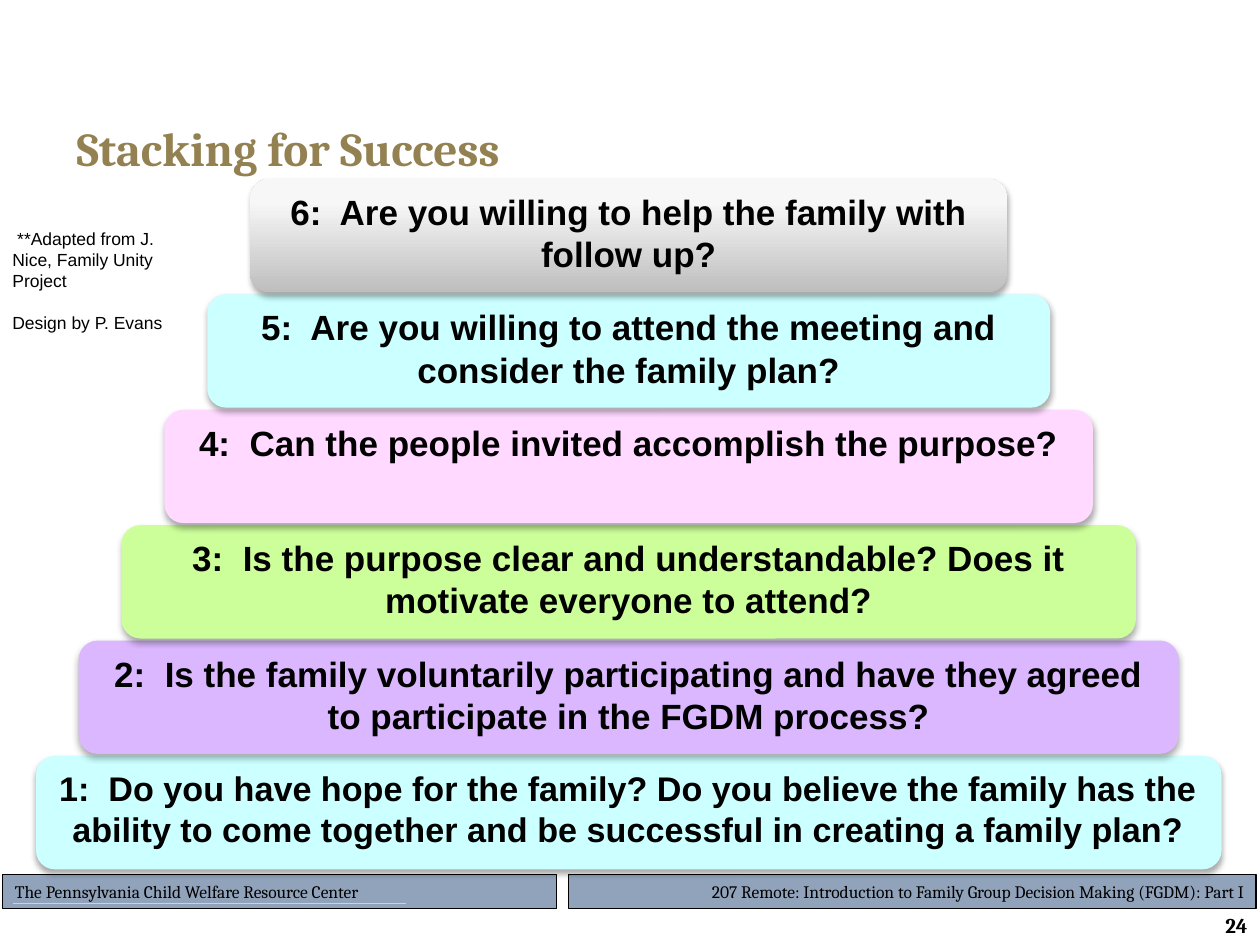
import pptx
import pptx.util
import pptx.dml.color
import pptx.enum.shapes
import pptx.enum.text
import pptx.oxml
import pptx.oxml.ns

Inches, Pt = pptx.util.Inches, pptx.util.Pt
RGBColor = pptx.dml.color.RGBColor
MSO_SHAPE = pptx.enum.shapes.MSO_SHAPE
ALIGN = pptx.enum.text.PP_ALIGN
ANCHOR = pptx.enum.text.MSO_ANCHOR

BLACK = RGBColor(0x00, 0x00, 0x00)
GOLD = RGBColor(0x94, 0x81, 0x51)
PALE_GOLD = RGBColor(0xE5, 0xD1, 0x99)
SLATE = RGBColor(0x91, 0xA3, 0xBB)
CYAN = RGBColor(0xCC, 0xFF, 0xFF)
VIOLET = RGBColor(0xDB, 0xB7, 0xFF)
GREEN = RGBColor(0xCC, 0xFF, 0x99)
PINK = RGBColor(0xFF, 0xD9, 0xFF)
GREY = RGBColor(0xBE, 0xBE, 0xBE)
LIGHT_GREY = RGBColor(0xF7, 0xF7, 0xF7)

# Bottom of the stack first: question, fill (a pair is a gradient), text size
QUESTIONS = [
    ("1:  Do you have hope for the family? Do you believe the family has the "
     "ability to come together and be successful in creating a family plan?", CYAN, 19.5),
    ("2:  Is the family voluntarily participating and have they agreed "
     "to participate in the FGDM process?", VIOLET, 20),
    ("3:  Is the purpose clear and understandable? Does it "
     "motivate everyone to attend?", GREEN, 20),
    ("4:  Can the people invited accomplish the purpose?", PINK, 20),
    ("5:  Are you willing to attend the meeting and consider the family plan?", CYAN, 20),
    ("6:  Are you willing to help the family with follow up?", (GREY, LIGHT_GREY), 20),
]
# Text, left, width, alignment, line width
FOOTERS = [
    ("207 Remote: Introduction to Family Group Decision Making (FGDM): Part I",
     4.51, 5.46, ALIGN.RIGHT, 0.75),
    ("The Pennsylvania Child Welfare Resource Center", 0.02, 4.4, ALIGN.LEFT, 0.5),
]
CREDITS = [" **Adapted from J. Nice, Family Unity Project", "Design by P. Evans"]

STACK_CENTER, STACK_BOTTOM_TOP = 4.99, 6
BASE_WIDTH, WIDTH_STEP = 9.41, 0.68
BLOCK_HEIGHT, BLOCK_PITCH = 0.9, 0.916


def write(shape, lines, size, font="Arial", color=BLACK, bold=False,
          align=ALIGN.LEFT, anchor=ANCHOR.TOP):
    frame = shape.text_frame
    frame.word_wrap = True
    frame.vertical_anchor = anchor
    frame.text = "\n".join(lines)
    for paragraph in frame.paragraphs:
        paragraph.alignment = align
        for run in paragraph.runs:
            run.font.name, run.font.size, run.font.bold = font, Pt(size), bold
            run.font.color.rgb = color
    return frame


def add_text(slide, box, lines, size, **style):
    return write(slide.shapes.add_textbox(*map(Inches, box)), lines, size, **style)


def add_soft_shadow(shape):
    shape.shadow.inherit = False
    effects = shape._element.spPr.find(pptx.oxml.ns.qn("a:effectLst"))
    effects.append(pptx.oxml.parse_xml(
        f'<a:outerShdw {pptx.oxml.ns.nsdecls("a")} blurRad="{Pt(3.5)}" dist="{Pt(2.2)}" '
        'dir="5400000" rotWithShape="0"><a:srgbClr val="000000">'
        '<a:alpha val="32000"/></a:srgbClr></a:outerShdw>'))


def add_footers(slide):
    for text, left, width, align, line_width in FOOTERS:
        bar = slide.shapes.add_shape(
            MSO_SHAPE.RECTANGLE, *map(Inches, (left, 6.94, width, 0.27)))
        bar.shadow.inherit = False
        bar.fill.solid()
        bar.fill.fore_color.rgb = SLATE
        bar.line.color.rgb = BLACK
        bar.line.width = Pt(line_width)
        write(bar, [text], 10, font="Cambria", align=align)
    underline = slide.shapes.add_connector(
        pptx.enum.shapes.MSO_CONNECTOR.STRAIGHT, *map(Inches, (0.1, 7.17, 3.22, 7.17)))
    underline.line.color.rgb = PALE_GOLD
    underline.line.width = Pt(0.75)
    underline._element.spPr.append(pptx.oxml.parse_xml(
        f'<a:effectLst {pptx.oxml.ns.nsdecls("a")}/>'))


def add_stack(slide):
    for level, (question, fill, size) in enumerate(QUESTIONS):
        width = BASE_WIDTH - WIDTH_STEP * level
        block = slide.shapes.add_shape(
            MSO_SHAPE.ROUNDED_RECTANGLE, Inches(STACK_CENTER - width / 2),
            Inches(STACK_BOTTOM_TOP - BLOCK_PITCH * level),
            Inches(width), Inches(BLOCK_HEIGHT))
        if isinstance(fill, RGBColor):
            block.fill.solid()
            block.fill.fore_color.rgb = fill
        else:
            block.fill.gradient()
            block.fill.gradient_angle = 90
            for stop, color, position in zip(block.fill.gradient_stops, fill, (0, 0.8)):
                stop.color.rgb, stop.position = color, position
        block.line.fill.background()
        add_soft_shadow(block)
        write(block, [question], size, bold=True, align=ALIGN.CENTER)


def main():
    deck = pptx.Presentation()
    deck.slide_width, deck.slide_height = Inches(10), Inches(7.5)
    slide = deck.slides.add_slide(deck.slide_layouts[6])
    add_footers(slide)
    add_text(slide, (0.51, 0.85, 9, 0.65), ["Stacking for Success"], 27,
             font="Cambria", color=GOLD, bold=True, anchor=ANCHOR.MIDDLE)
    add_text(slide, (8.89, 7.24, 1.11, 0.21), ["24"], 12, font="Cambria",
             bold=True, align=ALIGN.RIGHT, anchor=ANCHOR.MIDDLE)
    add_stack(slide)
    credits = add_text(slide, (0, 1.76, 1.41, 1.35), CREDITS, 10)
    credits.paragraphs[1].space_before = Pt(12)
    deck.save("out.pptx")


if __name__ == "__main__":
    main()
